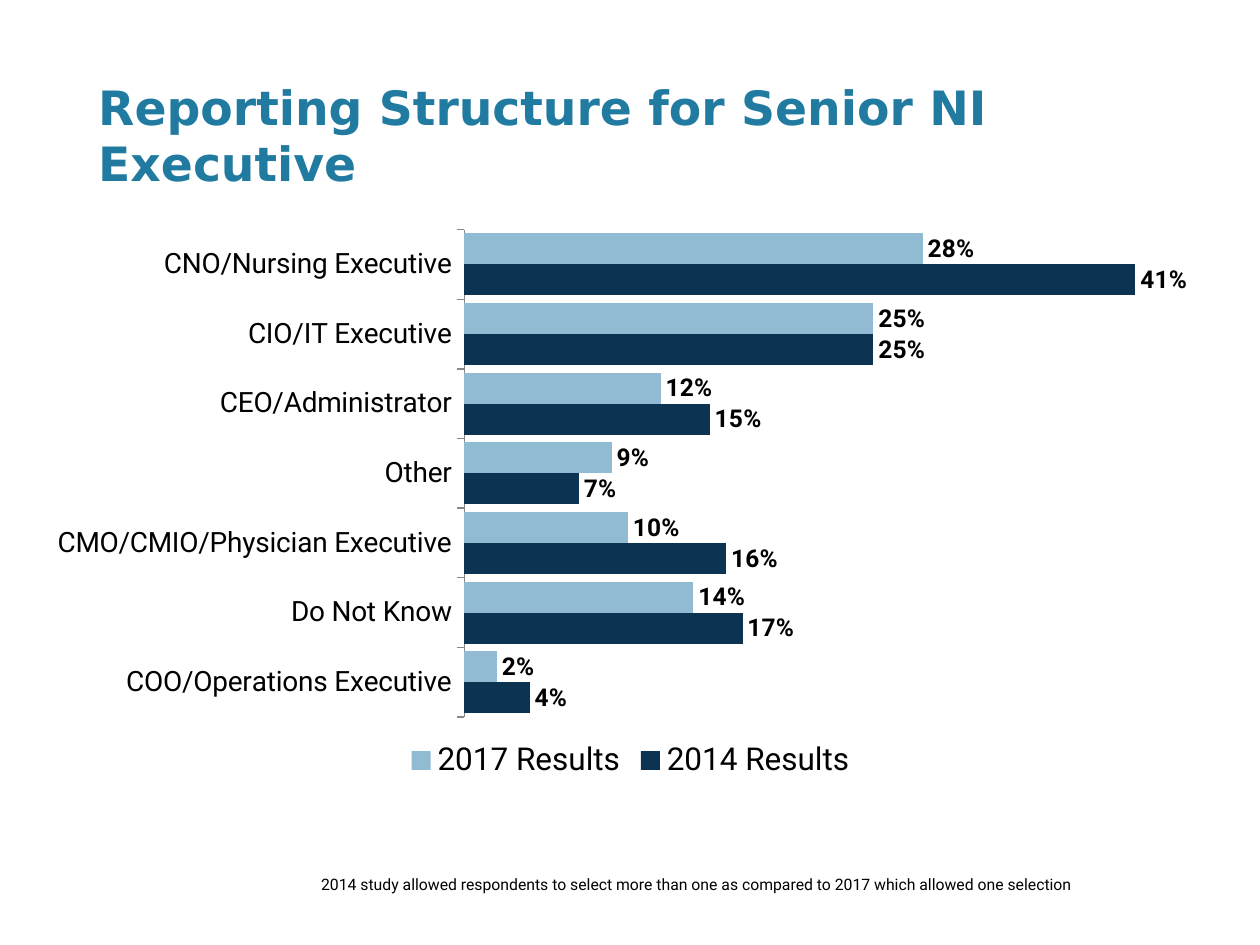
from dataclasses import dataclass

import lxml.etree
import pptx
import pptx.chart.data
import pptx.dml.color
import pptx.enum.chart
import pptx.enum.text
import pptx.oxml
import pptx.oxml.ns
import pptx.util

CATEGORIES = ["COO/Operations Executive", "Do Not Know", "CMO/CMIO/Physician Executive",
              "Other", "CEO/Administrator", "CIO/IT Executive", "CNO/Nursing Executive"]
RESULTS = {
    "2014 Results": (0.04, 0.17, 0.16, 0.07, 0.15, 0.25, 0.41),
    "2017 Results": (0.02, 0.14, 0.1, 0.09, 0.12, 0.25, 0.28),
}


@dataclass(frozen=True)
class Theme:
    title: dict
    note: dict
    body: dict
    category: dict
    value: dict
    bars: tuple
    axis: str


THEME = Theme(
    title={"name": "DejaVu Sans", "size": 27, "bold": True, "color": "217AA0"},
    note={"name": "Roboto", "size": 9, "color": "000000"},
    body={"name": "Roboto", "size": 18, "color": "000000"},
    category={"name": "Roboto", "size": 16, "color": "000000"},
    value={"name": "Roboto", "size": 14, "bold": True, "color": "000000"},
    bars=("0C3351", "91BAD3"),
    axis="888888",
)


class SlideBuilder:
    """Hold the theme and the current slide, and add elements by shares of its size."""

    def __init__(self, prs, theme):
        self.prs, self.theme = prs, theme
        self.s = prs.slides.add_slide(prs.slide_layouts[6])

    def box(self, x, y, w, h):
        width, height = self.prs.slide_width, self.prs.slide_height
        return [round(v) for v in (x * width, y * height, w * width, h * height)]

    def rgb(self, value):
        return pptx.dml.color.RGBColor.from_string(value)

    def format(self, font, style):
        for key, value in style.items():
            if key == "color":
                font.color.rgb = self.rgb(value)
            else:
                setattr(font, key, pptx.util.Pt(value) if key == "size" else value)

    def text(self, text, share, style, **frame):
        tf = self.s.shapes.add_textbox(*self.box(*share)).text_frame
        for key, value in {"word_wrap": True, **frame}.items():
            setattr(tf, key, value)
        r = tf.paragraphs[0].add_run()
        r.text = text
        self.format(r.font, style)

    def bar_chart(self, categories, results, share, plot_share):
        data = pptx.chart.data.CategoryChartData(number_format="0%")
        data.categories = categories
        for name, values in results.items():
            data.add_series(name, values)
        kind = pptx.enum.chart.XL_CHART_TYPE.BAR_CLUSTERED
        chart = self.s.shapes.add_chart(kind, *self.box(*share), data).chart
        chart.has_title = False
        self.format(chart.font, self.theme.body)
        self.legend(chart)
        self.axes(chart)
        plot = chart.plots[0]
        plot.gap_width, plot.overlap, plot.vary_by_categories = 25, 0, False
        for series, color in zip(plot.series, self.theme.bars):
            self.bars(series, color)
        self.place_plot(chart, plot_share)

    def legend(self, chart):
        chart.has_legend = True
        chart.legend.position = pptx.enum.chart.XL_LEGEND_POSITION.BOTTOM
        chart.legend.include_in_layout = False
        self.format(chart.legend.font, self.theme.body)

    def axes(self, chart):
        axis = chart.category_axis
        axis.major_tick_mark = pptx.enum.chart.XL_TICK_MARK.OUTSIDE
        self.format(axis.tick_labels.font, self.theme.category)
        axis.format.line.color.rgb = self.rgb(self.theme.axis)
        axis.format.line.width = pptx.util.Pt(0.75)
        scale = {"visible": False, "has_major_gridlines": False,
                 "minimum_scale": 0, "maximum_scale": 0.45}
        for key, value in scale.items():
            setattr(chart.value_axis, key, value)

    def bars(self, series, color):
        series.format.fill.solid()
        series.format.fill.fore_color.rgb = self.rgb(color)
        series.invert_if_negative = False
        labels = series.data_labels
        options = {"show_value": True, "number_format": "0%", "number_format_is_linked": False,
                   "position": pptx.enum.chart.XL_LABEL_POSITION.OUTSIDE_END}
        for key, value in options.items():
            setattr(labels, key, value)
        self.format(labels.font, self.theme.value)

    def place_plot(self, chart, share):
        qn = pptx.oxml.ns.qn
        area = chart.plots[0]._element.getparent()
        for old in area.findall(qn("c:layout")):
            area.remove(old)
        layout = lxml.etree.Element(qn("c:layout"))
        manual = lxml.etree.SubElement(layout, qn("c:manualLayout"))
        settings = {"layoutTarget": "inner", "xMode": "edge", "yMode": "edge",
                    **dict(zip("xywh", share))}
        for key, value in settings.items():
            lxml.etree.SubElement(manual, qn(f"c:{key}")).set("val", str(value))
        area.insert(0, layout)


def main():
    prs = pptx.Presentation()
    prs.slide_width, prs.slide_height = pptx.util.Inches(10), pptx.util.Inches(7.5)
    slide = SlideBuilder(prs, THEME)
    slide.text("Reporting Structure for Senior NI Executive", (0.078, 0.084, 0.907, 0.117),
               THEME.title, margin_left=0,
               vertical_anchor=pptx.enum.text.MSO_ANCHOR.MIDDLE)
    slide.bar_chart(CATEGORIES, RESULTS, (0.029, 0.231, 0.943, 0.6), (0.36, 0.02, 0.62, 0.86))
    slide.text("2014 study allowed respondents to select more than one as compared to 2017 "
               "which allowed one selection", (0.245, 0.919, 0.755, 0.033), THEME.note,
               auto_size=pptx.enum.text.MSO_AUTO_SIZE.SHAPE_TO_FIT_TEXT)
    prs.save("out.pptx")


if __name__ == "__main__":
    main()
